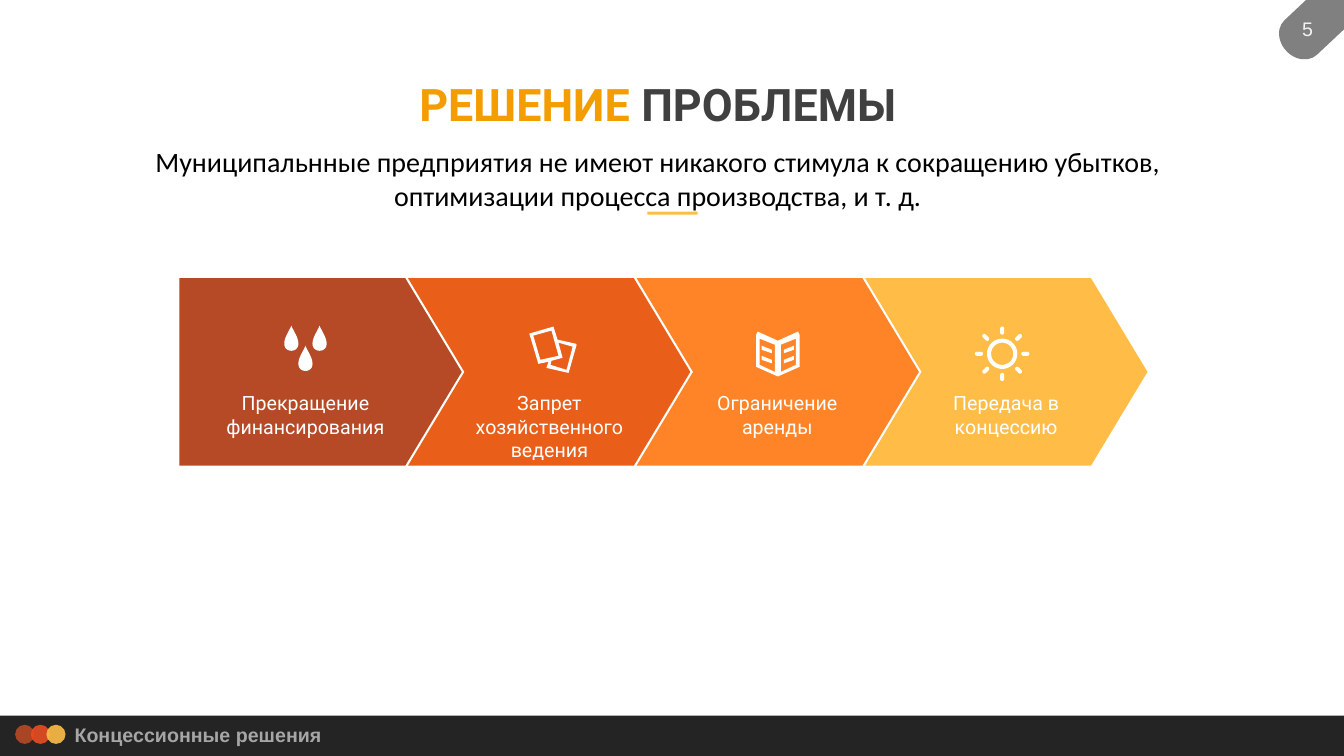
"""Build the slide with four chevron steps towards a concession."""
from dataclasses import dataclass
from math import cos, pi, sin

from lxml.etree import SubElement
from pptx import Presentation
from pptx.dml.color import RGBColor
from pptx.enum.shapes import MSO_SHAPE
from pptx.enum.text import MSO_ANCHOR, PP_ALIGN
from pptx.oxml.ns import qn
from pptx.shapes.autoshape import Shape
from pptx.shapes.shapetree import SlideShapes
from pptx.util import Inches, Pt

Points = list[tuple[float, float]]

WHITE = RGBColor(0xFF, 0xFF, 0xFF)
BLACK = RGBColor(0, 0, 0)
NIGHT = RGBColor(0x0D, 0x0D, 0x0D)
DARK = RGBColor(0x40, 0x40, 0x40)
GREY = RGBColor(0x80, 0x80, 0x80)
SILVER = RGBColor(0xA6, 0xA6, 0xA6)
PALE = RGBColor(0xF2, 0xF2, 0xF2)
GOLD = RGBColor(0xF4, 0x9D, 0x00)
BRICK = RGBColor(0xB6, 0x49, 0x26)
RED = RGBColor(0xE8, 0x4C, 0x22)
RUST = RGBColor(0xE9, 0x5E, 0x18)
ORANGE = RGBColor(0xFF, 0x84, 0x27)
AMBER = RGBColor(0xFF, 0xBD, 0x47)

LEFT, TOP, BOTTOM = 1.78, 2.76, 4.62
PITCH, BODY, TIP = 2.267, 2.24, 0.56


@dataclass(frozen=True)
class Box:
    left: float
    top: float
    width: float
    height: float


@dataclass(frozen=True)
class Step:
    text: str
    color: RGBColor
    left: float
    icon: list[Points]


def paint(shape: Shape, color: RGBColor, alpha: int = 100) -> None:
    shape.shadow.inherit = False
    shape.line.fill.background()
    shape.fill.solid()
    shape.fill.fore_color.rgb = color
    if alpha < 100:
        tint = shape._element.spPr.find(qn("a:solidFill"))[0]
        SubElement(tint, qn("a:alpha"), val=str(alpha * 1000))


def add_form(shapes: SlideShapes, kind: MSO_SHAPE, box: Box,
             color: RGBColor, alpha: int = 100) -> Shape:
    shape = shapes.add_shape(kind, Inches(box.left), Inches(box.top),
                             Inches(box.width), Inches(box.height))
    paint(shape, color, alpha)
    return shape


def add_path(shapes: SlideShapes, loops: list[Points], color: RGBColor) -> None:
    grid = [[(Inches(x), Inches(y)) for x, y in loop] for loop in loops]
    pen = shapes.build_freeform(*grid[0][0])
    for i, loop in enumerate(grid):
        if i:
            pen.move_to(*loop[0])
        pen.add_line_segments(loop[1:], close=True)
    paint(pen.convert_to_shape(), color)


def add_text(shapes: SlideShapes, text: str, box: Box, face: str,
             color: RGBColor, align: PP_ALIGN = PP_ALIGN.CENTER,
             bold: bool = False) -> None:
    frame = shapes.add_textbox(Inches(box.left), Inches(box.top),
                               Inches(box.width), Inches(box.height)).text_frame
    frame.word_wrap = True
    line = frame.paragraphs[0]
    line.text = text
    line.alignment = align
    line.font.name, line.font.size, line.font.bold = face, Pt(14), bold
    line.font.color.rgb = color


def arc(x: float, y: float, radius: float, start: float = 0,
        sweep: float = 2 * pi, count: int = 40) -> Points:
    turns = [start + sweep * i / count for i in range(count + 1)]
    return [(x + radius * cos(t), y + radius * sin(t)) for t in turns]


def drop(x: float, top: float) -> Points:
    turns = [2 * pi * i / 40 for i in range(40)]
    return [(x + 0.1 * sin(t) * sin(t / 2) ** 1.5, top + 0.125 * (1 - cos(t)))
            for t in turns]


def ray(x: float, y: float, angle: float) -> Points:
    ends = [(0.25, angle - pi / 2), (0.21, angle + pi / 2)]
    return [spot for reach, start in ends
            for spot in arc(x + reach * cos(angle), y + reach * sin(angle),
                            0.02, start, pi, 8)]


def sun(x: float, y: float) -> list[Points]:
    rays = [ray(x, y, pi / 4 * i) for i in range(8)]
    return [arc(x, y, 0.15), arc(x, y, 0.11), *rays]


def book(x: float) -> list[Points]:
    half = [[(0.03, 3.42), (0.18, 3.36), (0.18, 3.62), (0.03, 3.69)]]
    half += [[(0.06, y), (0.16, y - 0.04), (0.16, y), (0.06, y + 0.035)]
             for y in (3.47, 3.57)]
    cover = [(0, 3.38), (0.2, 3.29), (0.215, 3.32), (0.215, 3.64), (0, 3.735),
             (-0.215, 3.64), (-0.215, 3.32), (-0.2, 3.29)]
    pages = [[(side * dx, y) for dx, y in loop]
             for side in (-1, 1) for loop in half]
    return [[(x + dx, y) for dx, y in loop] for loop in [cover, *pages]]


DROPS = [drop(2.89, 3.23), drop(3.17, 3.23), drop(3.03, 3.43)]
CARDS = [
    [(5.71, 3.41), (5.53, 3.37), (5.49, 3.24), (5.25, 3.31), (5.34, 3.61),
     (5.44, 3.59), (5.42, 3.65), (5.64, 3.7), (5.72, 3.42)],
    [(5.29, 3.33), (5.47, 3.28), (5.54, 3.53), (5.36, 3.57)],
    [(5.62, 3.67), (5.46, 3.62), (5.47, 3.58), (5.58, 3.55), (5.54, 3.4),
     (5.68, 3.44)],
]
STEPS = [
    Step("Прекращение финансирования", BRICK, 2.1, DROPS),
    Step("Запрет хозяйственного ведения", RUST, 4.52, CARDS),
    Step("Ограничение аренды", ORANGE, 6.78, book(7.715)),
    Step("Передача в концессию", AMBER, 9.05, sun(9.94, 3.51)),
]


def add_step(shapes: SlideShapes, index: int, step: Step) -> None:
    left, mid = LEFT + PITCH * index, (TOP + BOTTOM) / 2
    edge = [(left, TOP), (left + BODY, TOP), (left + BODY + TIP, mid),
            (left + BODY, BOTTOM), (left, BOTTOM)]
    if index:
        edge.append((left + TIP, mid))
    add_path(shapes, [edge], step.color)
    add_path(shapes, step.icon, WHITE)
    add_text(shapes, step.text, Box(step.left, 3.83, 1.86, 0.34), "Roboto", WHITE)


def fill_title(title: Shape) -> None:
    title.left, title.top = Inches(1.34), Inches(0.71)
    title.width, title.height = Inches(10.37), Inches(1.43)
    frame = title.text_frame
    frame.word_wrap = True
    frame.vertical_anchor = MSO_ANCHOR.TOP
    head, lead = frame.paragraphs[0], frame.add_paragraph()
    for text, color in (("РЕШЕНИЕ ", GOLD), ("ПРОБЛЕМЫ", DARK)):
        run = head.add_run()
        run.text = text
        run.font.color.rgb = color
    lead.text = ("Муниципальнные предприятия не имеют никакого стимула к "
                 "сокращению убытков, оптимизации процесса производства, и т. д.")
    lead.font.color.rgb = BLACK
    for line, face, size in ((head, "Roboto", 32), (lead, "Calibri", 20)):
        line.alignment = PP_ALIGN.CENTER
        line.line_spacing = 1.0
        line.space_before, line.space_after = Pt(4), Pt(6)
        line.font.name, line.font.size = face, Pt(size)
        line.font.bold = line is head


def main() -> None:
    deck = Presentation()
    deck.slide_width, deck.slide_height = Inches(13.33), Inches(7.5)
    shapes = deck.slides.add_slide(deck.slide_layouts[5]).shapes
    fill_title(shapes.title)
    add_form(shapes, MSO_SHAPE.RECTANGLE, Box(0, 7.1, 13.33, 0.4), NIGHT, 90)
    badge = add_form(shapes, MSO_SHAPE.FLOWCHART_STORED_DATA,
                     Box(12.6, -0.13, 1.17, 0.47), GREY)
    badge.rotation = 316.8
    add_text(shapes, "5", Box(12.74, 0.12, 0.46, 0.34), "Arial", PALE)
    for i, color in enumerate((BRICK, RED, AMBER)):
        add_form(shapes, MSO_SHAPE.OVAL,
                 Box(0.15 + 0.155 * i, 7.19, 0.19, 0.19), color, 90)
    for i, step in enumerate(STEPS):
        add_step(shapes, i, step)
    add_form(shapes, MSO_SHAPE.RECTANGLE, Box(6.42, 2.1, 0.5, 0.03), AMBER)
    add_text(shapes, "Концессионные решения", Box(0.19, 7.12, 3.1, 0.34),
             "Arial", SILVER, PP_ALIGN.RIGHT, True)
    deck.save("out.pptx")


if __name__ == "__main__":
    main()
